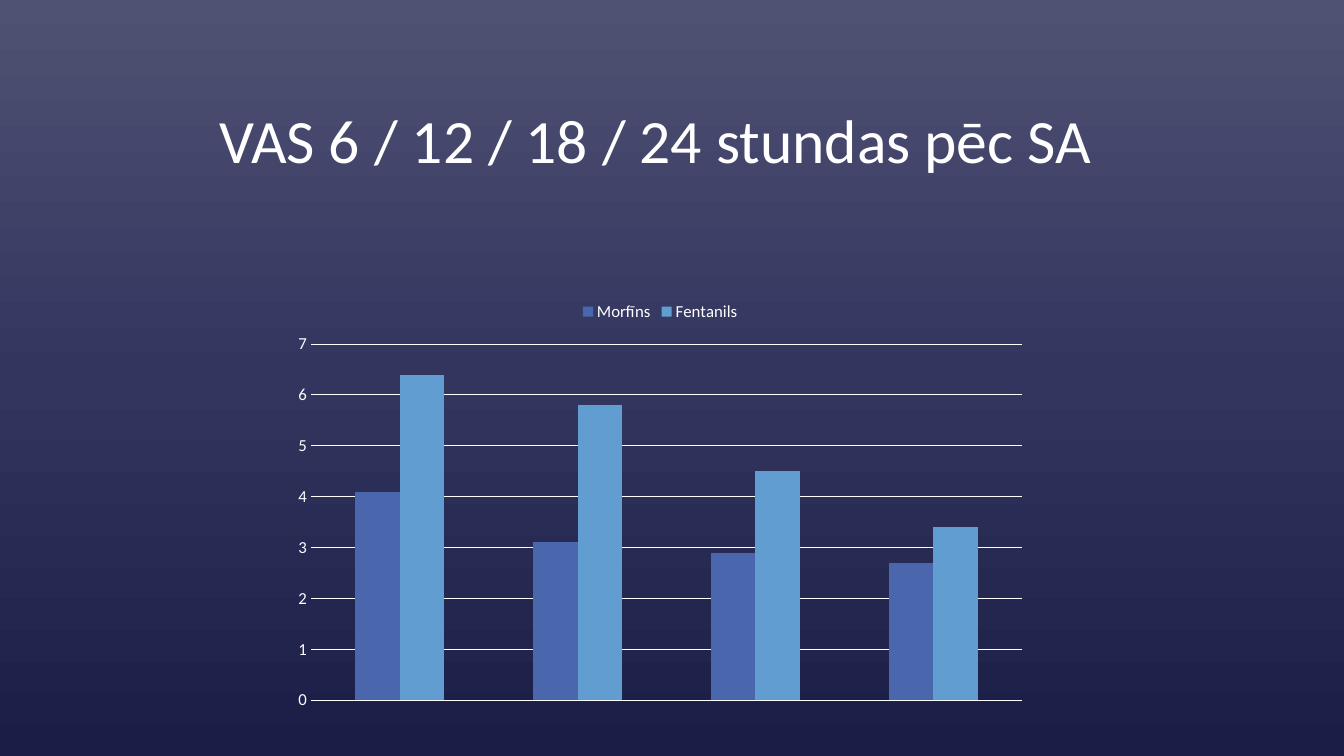
from copy import deepcopy

from pptx import Presentation
from pptx.chart.data import CategoryChartData
from pptx.dml.color import RGBColor
from pptx.enum.chart import XL_CHART_TYPE, XL_LEGEND_POSITION, XL_TICK_MARK
from pptx.enum.text import MSO_ANCHOR, PP_ALIGN
from pptx.util import Pt

# Content
TITLE = "VAS 6 / 12 / 18 / 24 stundas pēc SA"
CATEGORIES = ["1", "2", "3", "4"]
SERIES = {
    "Morfīns": [4.1, 3.1, 2.9, 2.7],
    "Fentanils": [6.4, 5.8, 4.5, 3.4],
}

# Look and layout, in points
COLOURS = {
    "top": "505273", "middle": "32355E", "bottom": "1A1E47",
    "text": "FFFFFF", "Morfīns": "4A66AC", "Fentanils": "629DD1",
}
PAGE_SIZE = (960, 540)
TITLE_BOX = (133.92, 43.2, 668.88, 118.8)
CHART_BOX = (202.32, 207.36, 538.56, 306)


def colour(name):
    return RGBColor.from_string(COLOURS[name])


def apply(target, values):
    for name, value in values.items():
        setattr(target, name, value)


def style_font(font, size):
    apply(font, {"name": "Calibri", "size": Pt(size)})
    font.color.rgb = colour("text")


deck = Presentation()
deck.slide_width, deck.slide_height = map(Pt, PAGE_SIZE)
page = deck.slides.add_slide(deck.slide_layouts[6])

# Background: three-stop gradient running downwards
fill = page.background.fill
fill.gradient()
fill.gradient_angle = 270
stop_list = page.background.fill._fill._gradFill.gsLst
stop_list.insert(1, deepcopy(stop_list[0]))
for index, (stop, name) in enumerate(zip(fill.gradient_stops, ("top", "middle", "bottom"))):
    stop.position = index / 2
    stop.color.rgb = colour(name)

# Title
box = page.shapes.add_textbox(*map(Pt, TITLE_BOX))
apply(box.text_frame, {"word_wrap": True, "vertical_anchor": MSO_ANCHOR.MIDDLE})
para = box.text_frame.paragraphs[0]
apply(para, {"alignment": PP_ALIGN.CENTER, "line_spacing": 0.9})
span = para.add_run()
span.text = TITLE
style_font(span.font, 44)

# Chart
data = CategoryChartData()
data.categories = CATEGORIES
for name, values in SERIES.items():
    data.add_series(name, values)
chart = page.shapes.add_chart(
    XL_CHART_TYPE.COLUMN_CLUSTERED, *map(Pt, CHART_BOX), data).chart
apply(chart, {"has_title": False, "has_legend": True})
style_font(chart.font, 10)
apply(chart.legend, {"position": XL_LEGEND_POSITION.TOP, "include_in_layout": False})
style_font(chart.legend.font, 12)

# Columns
plot = chart.plots[0]
apply(plot, {"gap_width": 199, "overlap": 0, "vary_by_categories": False})
for series in plot.series:
    series.format.fill.solid()
    series.format.fill.fore_color.rgb = colour(series.name)

# Axes
chart.category_axis.visible = False
axis = chart.value_axis
apply(axis, {
    "minimum_scale": 0, "maximum_scale": 7, "major_unit": 1,
    "major_tick_mark": XL_TICK_MARK.NONE, "minor_tick_mark": XL_TICK_MARK.NONE,
    "has_major_gridlines": True,
})
style_font(axis.tick_labels.font, 12)
axis.format.line.fill.background()
grid = axis.major_gridlines.format.line
grid.width = Pt(0.75)
grid.color.rgb = colour("text")

deck.save("out.pptx")
